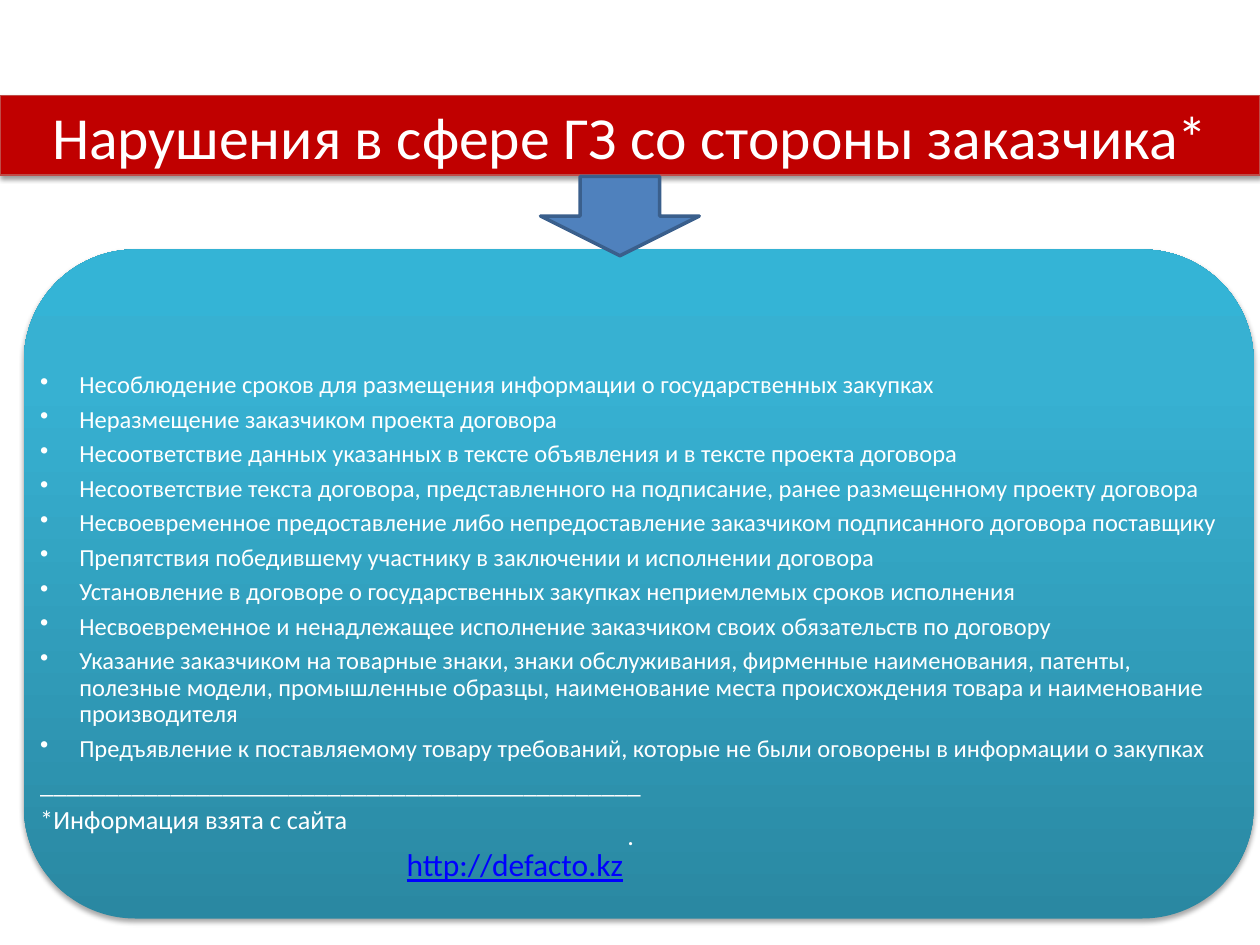
from copy import deepcopy

from lxml import etree
from pptx import Presentation
from pptx.dml.color import RGBColor
from pptx.enum.shapes import MSO_SHAPE
from pptx.enum.text import MSO_ANCHOR, MSO_AUTO_SIZE, PP_ALIGN
from pptx.oxml.ns import qn
from pptx.util import Inches, Pt

ROUND, ARROW = MSO_SHAPE.ROUNDED_RECTANGLE, MSO_SHAPE.DOWN_ARROW
MIDDLE, CENTER = MSO_ANCHOR.MIDDLE, PP_ALIGN.CENTER
NONE, GROW = MSO_AUTO_SIZE.NONE, MSO_AUTO_SIZE.SHAPE_TO_FIT_TEXT
WHITE = "FFFFFF"


def color(hex):
    return RGBColor.from_string(hex)


def style(para, size, hex=WHITE):
    for run in para.runs:
        run.font.size = Pt(size)
        run.font.name = "Calibri"
        run.font.color.rgb = color(hex)


prs = Presentation()
prs.slide_width, prs.slide_height = Inches(10), Inches(7.5)
slide = prs.slides.add_slide(prs.slide_layouts[5])
shapes = slide.shapes

# Title band
title = shapes.title
title.left, title.top = Inches(0), Inches(0.76)
title.width, title.height = Inches(10), Inches(0.63)
title.fill.solid()
title.fill.fore_color.rgb = color("C00000")
title.line.color.rgb = color("BF4C48")
title.line.width = Pt(0.75)
frame = title.text_frame
frame.text = "Нарушения в сфере ГЗ со стороны заказчика*"
frame.auto_size = NONE
frame.vertical_anchor = MIDDLE
frame.paragraphs[0].alignment = CENTER
style(frame.paragraphs[0], 34.1)

# Gradient panel, light at the top
panel = shapes.add_shape(ROUND, Inches(0.19), Inches(1.98), Inches(9.76), Inches(5.31))
panel.line.fill.background()
fill = panel.fill
fill.gradient()
fill.gradient_angle = 90
stops = panel._element.spPr.find(qn("a:gradFill")).find(qn("a:gsLst"))
stops.append(deepcopy(stops[-1]))
shades = [(0, "2A88A2"), (0.8, "37B1D2"), (1, "34B4D6")]
for stop, (place, hex) in zip(fill.gradient_stops, shades):
    stop.position = place
    stop.color.rgb = color(hex)

# Soft shadows under band and panel
for shape, dist, alpha in [(title, 1.6, 38), (panel, 1.8, 35)]:
    shape.shadow.inherit = False
    effect = shape._element.spPr.find(qn("a:effectLst"))
    outer = etree.SubElement(effect, qn("a:outerShdw"), blurRad=str(Pt(3.1)),
                             dist=str(Pt(dist)), dir="5400000", rotWithShape="0")
    black = etree.SubElement(outer, qn("a:srgbClr"), val="000000")
    etree.SubElement(black, qn("a:alpha"), val=str(alpha * 1000))

# List of violations and source note
items = [
    "Несоблюдение сроков для размещения информации о государственных закупках",
    "Неразмещение заказчиком проекта договора",
    "Несоответствие данных указанных в тексте объявления и в тексте проекта договора",
    "Несоответствие текста договора, представленного на подписание, ранее размещенному проекту договора",
    "Несвоевременное предоставление либо непредоставление заказчиком подписанного договора поставщику",
    "Препятствия победившему участнику в заключении и исполнении договора",
    "Установление в договоре о государственных закупках неприемлемых сроков исполнения",
    "Несвоевременное и ненадлежащее исполнение заказчиком своих обязательств по договору",
    "Указание заказчиком на товарные знаки, знаки обслуживания, фирменные наименования, патенты, "
    "полезные модели, промышленные образцы, наименование места происхождения товара и наименование "
    "производителя",
    "Предъявление к поставляемому товару требований, которые не были оговорены в информации о закупках",
]
notes = ["_" * 46, "*Информация взята с сайта"]
body = shapes.add_textbox(Inches(0.26), Inches(1.98), Inches(9.63), Inches(5.63))
dot = shapes.add_textbox(Inches(0.33), Inches(6.09), Inches(9.35), Inches(1.11))
for box, lines in [(body, items + notes), (dot, ["."])]:
    frame = box.text_frame
    frame.word_wrap = True
    frame.vertical_anchor = MIDDLE
    frame.margin_left = frame.margin_right = Inches(0.06)
    frame.margin_top = frame.margin_bottom = Inches(0.06)
    frame.text = "\n".join(lines)
    for para, line in zip(frame.paragraphs, lines):
        para.line_spacing = 0.9
        para.space_after = Pt(4.6)
        if line in items:
            props = para._p.get_or_add_pPr()
            props.set("marL", str(Inches(0.31)))
            props.set("indent", str(-Inches(0.31)))
            etree.SubElement(props, qn("a:buChar"), char="•")
        style(para, 14 if line in items else 15)
dot.text_frame.paragraphs[0].alignment = CENTER

# Arrow from band to panel
arrow = shapes.add_shape(ARROW, Inches(4.29), Inches(1.4), Inches(1.26), Inches(0.63))
arrow.shadow.inherit = False
arrow.fill.solid()
arrow.fill.fore_color.rgb = color("4F81BD")
arrow.line.color.rgb = color("3A5F8C")
arrow.line.width = Pt(2)

# Web address
site = shapes.add_textbox(Inches(3.13), Inches(6.66), Inches(2.33), Inches(0.4))
frame = site.text_frame
frame.word_wrap = True
frame.auto_size = GROW
frame.text = "http://defacto.kz"
style(frame.paragraphs[0], 18, "0000FF")
frame.paragraphs[0].runs[0].font.underline = True

prs.save("out.pptx")
